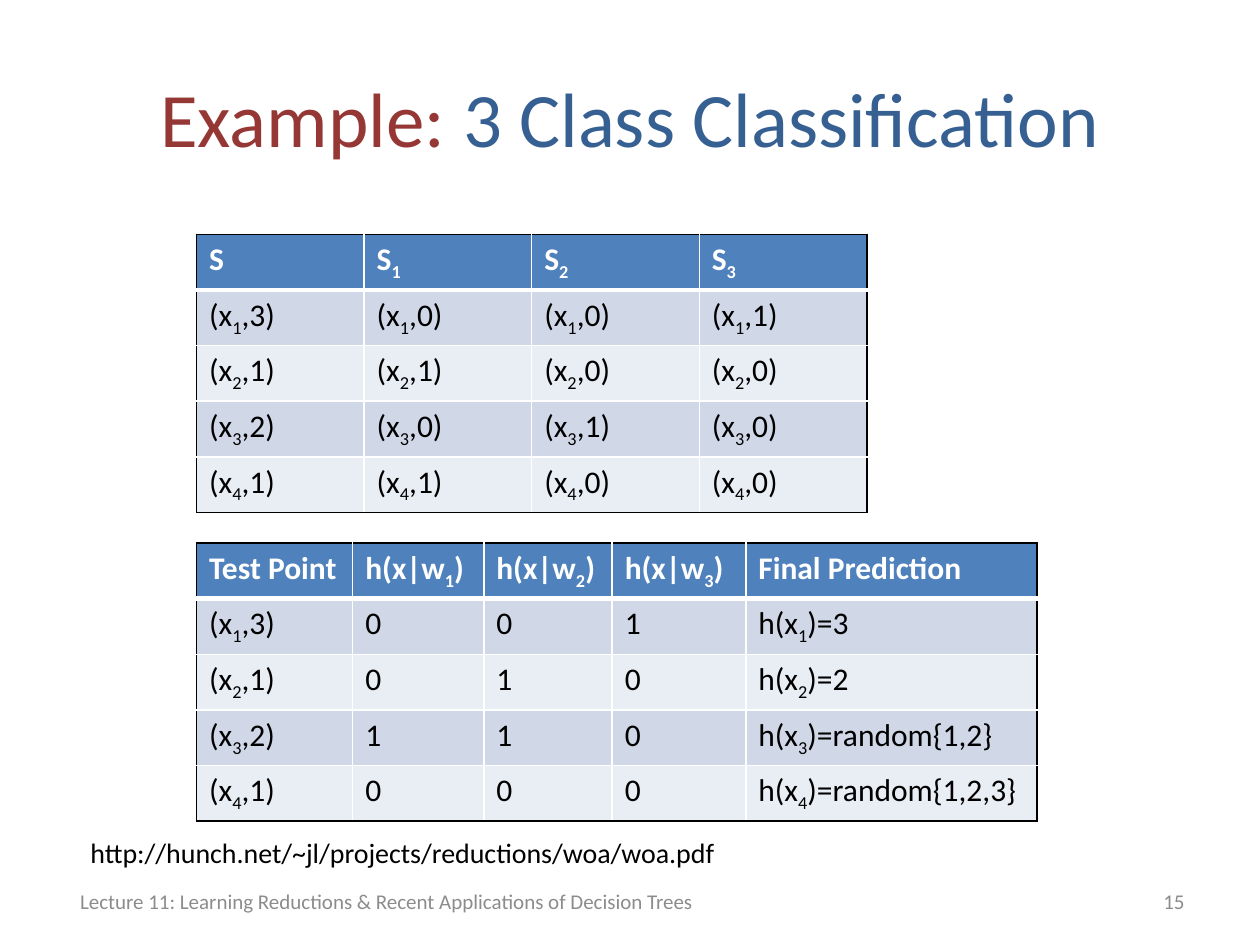
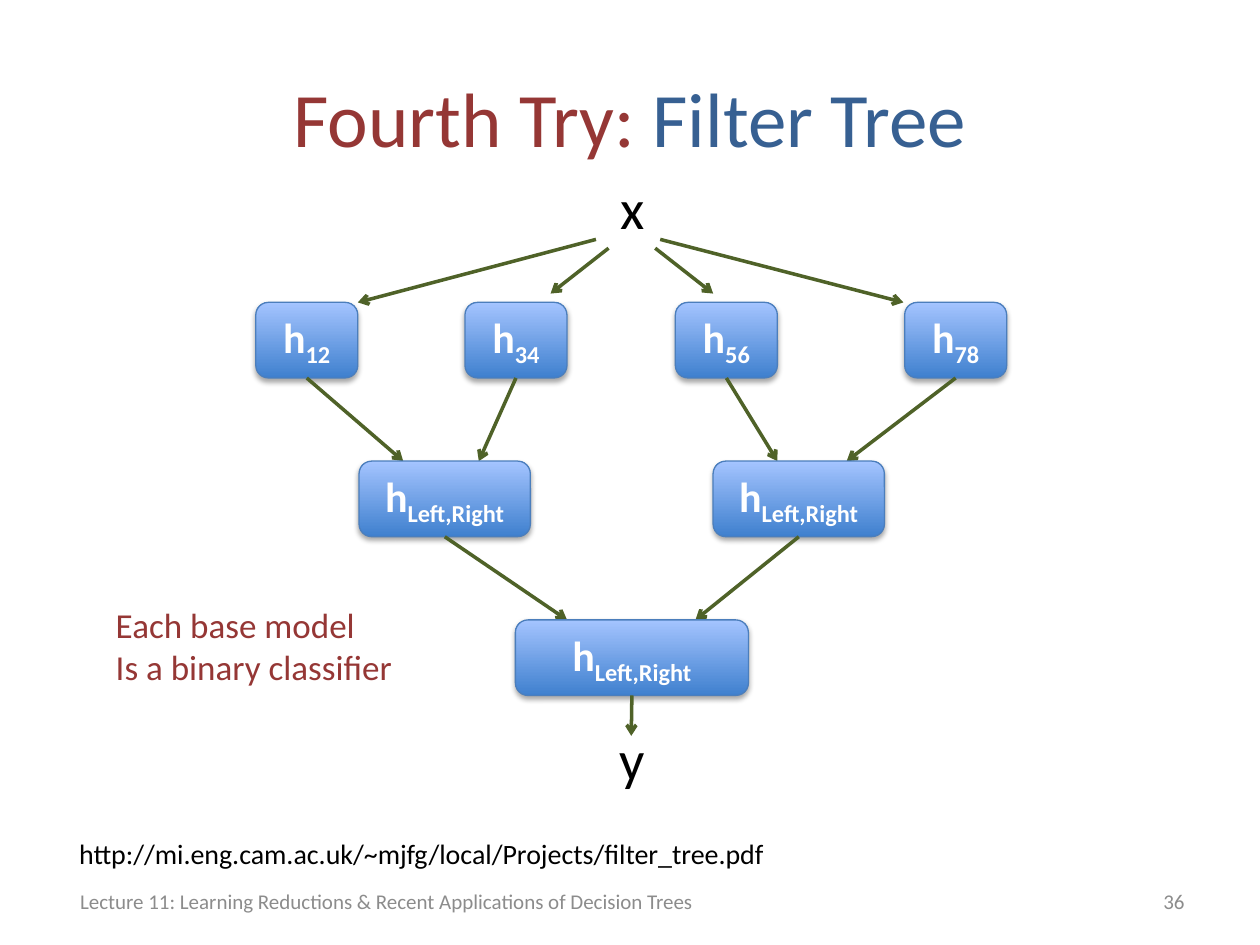
"""Build two lecture slides on reductions from multiclass to binary learning."""
from dataclasses import dataclass
from typing import Optional

from lxml import etree
from pptx import Presentation
from pptx.dml.color import RGBColor
from pptx.enum import shapes, text
from pptx.oxml.ns import qn
from pptx.util import Inches, Pt

FONT = "Calibri"
RED, BLUE, GREEN = "953735", "376092", "4F6228"
BLACK, WHITE, GREY = "000000", "FFFFFF", "8C8C8C"
HEADER, BANDS = "4F81BD", ("D0D8E8", "E9EDF4")
NODE_DARK, NODE_LIGHT, NODE_EDGE = "3F80CE", "A4C4FF", "4B7EBC"
LEFT, CENTER, RIGHT = text.PP_ALIGN.LEFT, text.PP_ALIGN.CENTER, text.PP_ALIGN.RIGHT
FOOTER = "Lecture 11: Learning Reductions & Recent Applications of Decision Trees"
ROW_HEIGHT = 0.41
NODE_HEIGHT, FIRST_LEVEL, LEVEL_STEP = 0.6, 2.4, 1.26
BOTTOM_SITE = 2


@dataclass
class Label:
    """A text box; lengths are in inches."""
    lines: str
    left: float
    top: float
    width: float
    height: float
    size: int
    color: str = BLACK
    align: text.PP_ALIGN = LEFT
    anchor: text.MSO_ANCHOR = text.MSO_ANCHOR.TOP


@dataclass
class Grid:
    """A banded table with a header row."""
    left: float
    top: float
    widths: list[float]
    rows: list[list[str]]


@dataclass
class Node:
    """A classifier in the tree and the point its outgoing arrow reaches."""
    name: str
    left: float
    level: int
    width: float
    target: tuple[float, float]

    @property
    def top(self) -> float:
        """Return the top edge of the node's level."""
        return FIRST_LEVEL + self.level * LEVEL_STEP


def rgb(color: str) -> RGBColor:
    """Turn a hex string into a colour."""
    return RGBColor.from_string(color)


def style(font, size: int, color: str, bold: bool = False) -> None:
    """Format a font."""
    font.name, font.size, font.bold = FONT, Pt(size), bold
    font.color.rgb = rgb(color)


def write_indexed(para, content: str, size: int, color: str, bold: bool = False) -> None:
    """Write text in which square brackets enclose subscripts."""
    for position, part in enumerate(content.replace("]", "[").split("[")):
        if not part:
            continue
        span = para.add_run()
        span.text = part
        style(span.font, size, color, bold)
        if position % 2:
            span.font._element.set("baseline", "-25000")


def add_label(page, label: Label) -> None:
    """Draw a text box."""
    box = page.shapes.add_textbox(Inches(label.left), Inches(label.top),
                                  Inches(label.width), Inches(label.height))
    frame = box.text_frame
    frame.word_wrap = True
    frame.vertical_anchor = label.anchor
    frame.text = label.lines
    for para in frame.paragraphs:
        para.alignment = label.align
        for span in para.runs:
            style(span.font, label.size, label.color)


def add_page(deck, lead: str, topic: str, number: str):
    """Add a slide with its two-colour title, footer and number."""
    page = deck.slides.add_slide(deck.slide_layouts[5])
    title = page.shapes.title
    title.left, title.top = Inches(0.5), Inches(0.3)
    title.width, title.height = Inches(9), Inches(1.25)
    title.text_frame.vertical_anchor = text.MSO_ANCHOR.MIDDLE
    para = title.text_frame.paragraphs[0]
    para.alignment = CENTER
    for words, color in ((lead + " ", RED), (topic, BLUE)):
        span = para.add_run()
        span.text = words
        style(span.font, 44, color)
    middle = text.MSO_ANCHOR.MIDDLE
    add_label(page, Label(FOOTER, 0.5, 6.95, 5.14, 0.4, 12, GREY, CENTER, middle))
    add_label(page, Label(number, 7.17, 6.95, 2.33, 0.4, 12, GREY, RIGHT, middle))
    return page


def add_border(cell, side: str, color: str, points: float) -> None:
    """Draw one side of a table cell."""
    line = etree.SubElement(cell._tc.get_or_add_tcPr(), qn(f"a:ln{side}"), w=str(Pt(points)))
    fill = etree.SubElement(line, qn("a:solidFill"))
    etree.SubElement(fill, qn("a:srgbClr"), val=color)


def add_grid(page, grid: Grid) -> None:
    """Draw a table with white rules and a black outline."""
    last_row, last_column = len(grid.rows) - 1, len(grid.widths) - 1
    table = page.shapes.add_table(
        last_row + 1, last_column + 1, Inches(grid.left), Inches(grid.top),
        Inches(sum(grid.widths)), Inches(ROW_HEIGHT * len(grid.rows))).table
    for column, width in zip(table.columns, grid.widths):
        column.width = Inches(width)
    for r, row in enumerate(grid.rows):
        table.rows[r].height = Inches(ROW_HEIGHT)
        for c, content in enumerate(row):
            cell = table.cell(r, c)
            is_header = r == 0
            edges = (("L", c == 0, 1), ("R", c == last_column, 1),
                     ("T", is_header, 3 if r == 1 else 1),
                     ("B", r == last_row, 3 if is_header else 1))
            for side, is_outer, points in edges:
                add_border(cell, side, BLACK if is_outer else WHITE, points)
            cell.fill.solid()
            cell.fill.fore_color.rgb = rgb(HEADER if is_header else BANDS[(r - 1) % 2])
            write_indexed(cell.text_frame.paragraphs[0], content, 18,
                          WHITE if is_header else BLACK, is_header)


def add_shadow(shape) -> None:
    """Give a shape a soft shadow below it."""
    shape.shadow.inherit = False
    effects = shape.element.spPr.find(qn("a:effectLst"))
    shadow = etree.SubElement(effects, qn("a:outerShdw"), blurRad=str(Pt(3.1)),
                              dist=str(Pt(1.8)), dir="5400000", rotWithShape="0")
    color = etree.SubElement(shadow, qn("a:srgbClr"), val=BLACK)
    etree.SubElement(color, qn("a:alpha"), val="35000")


def add_node(page, node: Node):
    """Draw a classifier box."""
    box = page.shapes.add_shape(
        shapes.MSO_SHAPE.ROUNDED_RECTANGLE, Inches(node.left), Inches(node.top),
        Inches(node.width), Inches(NODE_HEIGHT))
    box.fill.gradient()
    box.fill.gradient_angle = 90
    for stop, color in zip(box.fill.gradient_stops, (NODE_DARK, NODE_LIGHT)):
        stop.color.rgb = rgb(color)
    box.line.color.rgb = rgb(NODE_EDGE)
    box.line.width = Pt(0.75)
    add_shadow(box)
    box.text_frame.vertical_anchor = text.MSO_ANCHOR.MIDDLE
    para = box.text_frame.paragraphs[0]
    para.alignment = CENTER
    write_indexed(para, node.name, 24, WHITE, True)
    return box


def add_arrow(page, start: tuple[float, float], end: tuple[float, float],
              source: Optional[object] = None) -> None:
    """Draw an arrow, joined to the bottom of its source box if there is one."""
    arrow = page.shapes.add_connector(shapes.MSO_CONNECTOR.STRAIGHT,
                                      *(Inches(value) for value in start + end))
    if source is not None:
        arrow.begin_connect(source, BOTTOM_SITE)
    arrow.line.color.rgb = rgb(GREEN)
    arrow.line.width = Pt(2)
    properties = arrow.element.spPr
    etree.SubElement(properties.find(qn("a:ln")), qn("a:tailEnd"), type="arrow")
    etree.SubElement(properties, qn("a:effectLst"))


def build_classification(deck) -> None:
    """Build the worked example with three classes."""
    page = add_page(deck, "Example:", "3 Class Classification", "15")
    labels = {1: 3, 2: 1, 3: 2, 4: 1}
    classes = (1, 2, 3)
    points = [f"(x[{i}],{label})" for i, label in labels.items()]
    training = [["S"] + [f"S[{k}]" for k in classes]]
    for point, (i, label) in zip(points, labels.items()):
        training.append([point] + [f"(x[{i}],{int(label == k)})" for k in classes])
    votes = ("001", "010", "110", "000")
    outcomes = ("3", "2", "random{1,2}", "random{1,2,3}")
    predictions = [["Test Point"] + [f"h(x|w[{k}])" for k in classes] + ["Final Prediction"]]
    for i, (point, vote, outcome) in enumerate(zip(points, votes, outcomes), 1):
        predictions.append([point, *vote, f"h(x[{i}])={outcome}"])
    add_grid(page, Grid(1.56, 1.86, [1.33] * 4, training))
    add_grid(page, Grid(1.56, 4.31, [1.24, 1.04, 1.02, 1.06, 2.31], predictions))
    add_label(page, Label("http://hunch.net/~jl/projects/reductions/woa/woa.pdf",
                          0.62, 6.58, 5.24, 0.37, 16))


def build_filter_tree(deck) -> None:
    """Build the tree of binary classifiers from x to y."""
    page = add_page(deck, "Fourth Try:", "Filter Tree", "36")
    pair = "h[Left,Right]"
    nodes = [
        Node("h[12]", 2.03, 0, 0.81, (3.2, 3.66)),
        Node("h[34]", 3.69, 0, 0.81, (3.8, 3.66)),
        Node("h[56]", 5.36, 0, 0.81, (6.17, 3.66)),
        Node("h[78]", 7.18, 0, 0.81, (6.72, 3.66)),
        Node(pair, 2.85, 1, 1.36, (4.5, 4.92)),
        Node(pair, 5.66, 1, 1.36, (5.52, 4.92)),
        Node(pair, 4.09, 2, 1.85, (5.01, 5.84)),
    ]
    for node in nodes:
        box = add_node(page, node)
        bottom = (node.left + node.width / 2, node.top + NODE_HEIGHT)
        add_arrow(page, bottom, node.target, box)
    input_arrows = (((4.73, 1.9), (2.84, 2.4)), ((4.83, 1.97), (4.37, 2.33)),
                    ((5.2, 1.97), (5.66, 2.33)), ((5.24, 1.9), (7.17, 2.4)))
    for start, end in input_arrows:
        add_arrow(page, start, end)
    for label in (
        Label("x", 4.83, 1.33, 0.41, 0.64, 32),
        Label("y", 4.82, 5.7, 0.41, 0.64, 32),
        Label("Each base model\nIs a binary classifier", 0.82, 4.74, 2.42, 0.77, 20, RED),
        Label("http://mi.eng.cam.ac.uk/~mjfg/local/Projects/filter_tree.pdf",
              0.53, 6.59, 8.03, 0.37, 16),
    ):
        add_label(page, label)


def main() -> None:
    """Build and save the deck."""
    deck = Presentation()
    deck.slide_width, deck.slide_height = Inches(10), Inches(7.5)
    build_classification(deck)
    build_filter_tree(deck)
    deck.save("out.pptx")


if __name__ == "__main__":
    main()
